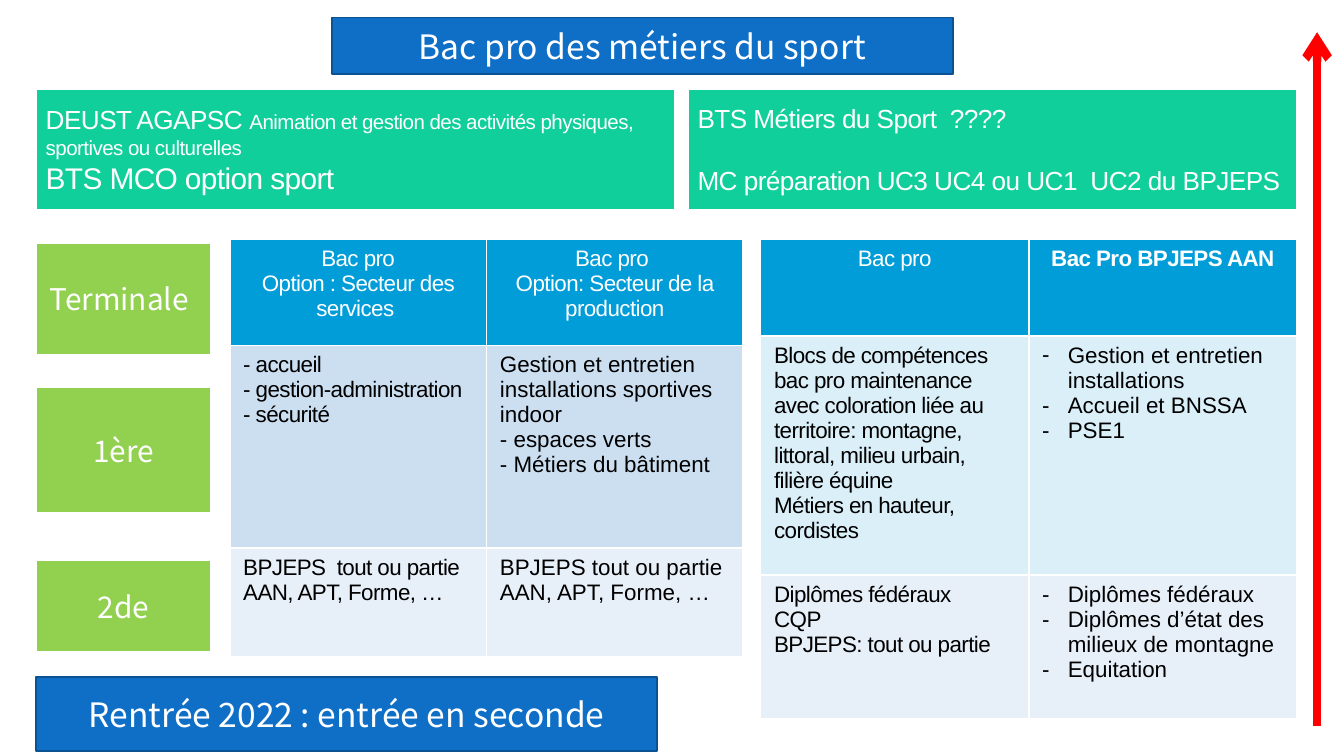
from lxml import etree
from pptx import Presentation
from pptx.dml.color import RGBColor
from pptx.enum import shapes, text
from pptx.oxml import ns
from pptx.util import Inches, Pt

ARIAL, NOTO = "Arial", "Noto Sans CJK SC"
WHITE, BLACK = "FFFFFF", "000000"
BLUE, NAVY, GREEN, LIME = "0F6FC6", "0B5292", "10CF9B", "92D050"
HEADER, PALE = "009DD9", "E7EFF8"
TIGHT = -0.3
LEFT, CENTER = text.PP_ALIGN.LEFT, text.PP_ALIGN.CENTER


def rgb(color):
    return RGBColor.from_string(color)


def add_child(parent, tag, **attributes):
    return etree.SubElement(parent, ns.qn(tag), attributes)


def write_span(para, words, size=12, font=ARIAL, color=WHITE, bold=False, spacing=0):
    span = para.add_run()
    span.text = words
    span.font.size, span.font.name, span.font.bold = Pt(size), font, bold
    span.font.color.rgb = rgb(color)
    if spacing:
        span.font._element.set("spc", str(round(spacing * 100)))


def write_lines(frame, lines, align=LEFT, dash=False, gap=0, **style):
    """Write one paragraph per line; a line is a string or a list of (words, size)."""
    for index, line in enumerate(lines):
        para = frame.add_paragraph() if index else frame.paragraphs[0]
        para.alignment = align
        para.space_before = Pt(gap if index else 0)
        if dash:
            props = para._p.get_or_add_pPr()
            props.set("marL", str(Inches(0.19)))
            props.set("indent", str(Inches(-0.19)))
            add_child(props, "a:buFont", typeface=ARIAL)
            add_child(props, "a:buChar", char="-")
        if isinstance(line, str):
            write_span(para, line, **style)
        else:
            for words, size in line:
                write_span(para, words, **{**style, "size": size})


def style_panel(panel, fill, line, inset=(0.1, 0.05)):
    panel.fill.solid()
    panel.fill.fore_color.rgb = rgb(fill)
    panel.line.color.rgb = rgb(line)
    panel.line.width = Pt(1)
    frame = panel.text_frame
    frame.word_wrap = True
    frame.auto_size = text.MSO_AUTO_SIZE.NONE
    frame.vertical_anchor = text.MSO_ANCHOR.MIDDLE
    frame.margin_left = frame.margin_right = Inches(inset[0])
    frame.margin_top = frame.margin_bottom = Inches(inset[1])
    return frame


def add_panel(page, box, fill, line=WHITE, **options):
    panel = page.shapes.add_shape(shapes.MSO_SHAPE.RECTANGLE, *map(Inches, box))
    panel.shadow.inherit = False
    return style_panel(panel, fill, line, **options)


def add_title(page, box, words):
    title = page.shapes.title
    title.left, title.top, title.width, title.height = map(Inches, box)
    write_lines(style_panel(title, BLUE, NAVY), [words], CENTER, size=18, font=NOTO)


def add_footer(page, box, words):
    write_lines(add_panel(page, box, BLUE, NAVY), [words], CENTER, size=18, font=NOTO)


def add_levels(page, left, width, levels):
    for name, top, height, align in levels:
        frame = add_panel(page, (left, top, width, height), LIME)
        write_lines(frame, [name], align, size=16, font=NOTO)


def add_diplomas(page, box, lines, gap=0):
    frame = add_panel(page, box, GREEN, inset=(0.07, 0.04))
    write_lines(frame, lines, gap=gap, size=14, spacing=TIGHT)


def fill_cell(cell, fill, lines, **style):
    props = cell._tc.get_or_add_tcPr()
    for side in ("a:lnL", "a:lnR", "a:lnT", "a:lnB"):
        border = add_child(props, side, w=str(Pt(1)))
        add_child(add_child(border, "a:solidFill"), "a:srgbClr", val=WHITE)
    cell.fill.solid()
    cell.fill.fore_color.rgb = rgb(fill)
    write_lines(cell.text_frame, lines, **style)


def add_pathway(page, box, heights, fills, rows):
    """Two equal columns; each cell is (lines, style)."""
    grid = page.shapes.add_table(len(rows), 2, *map(Inches, box)).table
    for column in grid.columns:
        column.width = Inches(box[2] / 2)
    for r, (height, fill, row) in enumerate(zip(heights, fills, rows)):
        grid.rows[r].height = Inches(height)
        base = {"color": BLACK} if r else {"align": CENTER, "spacing": TIGHT}
        for c, (lines, style) in enumerate(row):
            fill_cell(grid.cell(r, c), fill, lines, **base, **style)


def add_progress_arrow(page, x, bottom, top):
    arrow = page.shapes.add_connector(
        shapes.MSO_CONNECTOR.STRAIGHT, *map(Inches, (x, bottom, x, top)))
    arrow.line.color.rgb = rgb("FF0000")
    arrow.line.width = Pt(4.5)
    add_child(arrow.line._get_or_add_ln(), "a:tailEnd", type="arrow")
    add_child(arrow._element.spPr, "a:effectLst")


def main():
    deck = Presentation()
    # 16:9 page
    deck.slide_width, deck.slide_height = Inches(10), Inches(10 * 9 / 16)
    page = deck.slides.add_slide(deck.slide_layouts[5])
    tight, dashed = {"spacing": TIGHT}, {"dash": True}

    add_title(page, (2.47, 0.13, 4.62, 0.42), "Bac pro des métiers du sport")

    # School years
    add_levels(page, 0.27, 1.3, [
        ("Terminale", 1.81, 0.83, LEFT),
        ("1ère", 2.88, 0.94, CENTER),
        ("2de", 4.17, 0.68, CENTER),
    ])

    # Further diplomas
    add_diplomas(page, (0.27, 0.66, 4.75, 0.9), [
        [("DEUST AGAPSC ", 14),
         ("Animation et gestion des activités physiques, sportives ou culturelles", 11)],
        [("BTS MCO option sport", 16)],
    ])
    add_diplomas(page, (5.12, 0.66, 4.53, 0.9), [
        "BTS Métiers du Sport  ????",
        "MC préparation UC3 UC4 ou UC1  UC2 du BPJEPS",
    ], gap=16)

    # Bac pro with an option
    add_pathway(page, (1.71, 1.78, 3.82, 3.11), (0.79, 1.51, 0.81),
                (HEADER, "CCDFF1", PALE), [
        [(["Bac pro", "Option\u00a0: Secteur des services "], {}),
         (["Bac pro ", "Option: Secteur de la production"], {})],
        [(["- accueil", "- gestion-administration", "- sécurité"], tight),
         (["Gestion et entretien installations sportives indoor",
           "- espaces verts", "- Métiers du bâtiment"], {})],
        [(["BPJEPS  tout ou partie AAN, APT, Forme, …"], tight),
         (["BPJEPS tout ou partie AAN, APT, Forme, …"], {})],
    ])

    # Bac pro with local colour
    add_pathway(page, (5.66, 1.78, 3.99, 3.57), (0.72, 1.78, 1.07),
                (HEADER, "DBEFF9", PALE), [
        [(["Bac pro"], {}), (["Bac Pro BPJEPS AAN"], {"bold": True})],
        [(["Blocs de compétences bac pro maintenance avec coloration liée au "
           "territoire: montagne, littoral, milieu urbain, filière équine",
           "Métiers en hauteur, cordistes"], tight),
         (["Gestion et entretien installations", "Accueil et BNSSA", "PSE1"], dashed)],
        [(["Diplômes fédéraux", "CQP", "BPJEPS: tout ou partie"], tight),
         (["Diplômes fédéraux", "Diplômes d’état des milieux de montagne",
           "Equitation"], dashed)],
    ])

    add_footer(page, (0.27, 5.04, 4.62, 0.55), "Rentrée 2022 : entrée en seconde")
    add_progress_arrow(page, 9.8, 5.4, 0.24)
    deck.save("out.pptx")


if __name__ == "__main__":
    main()
